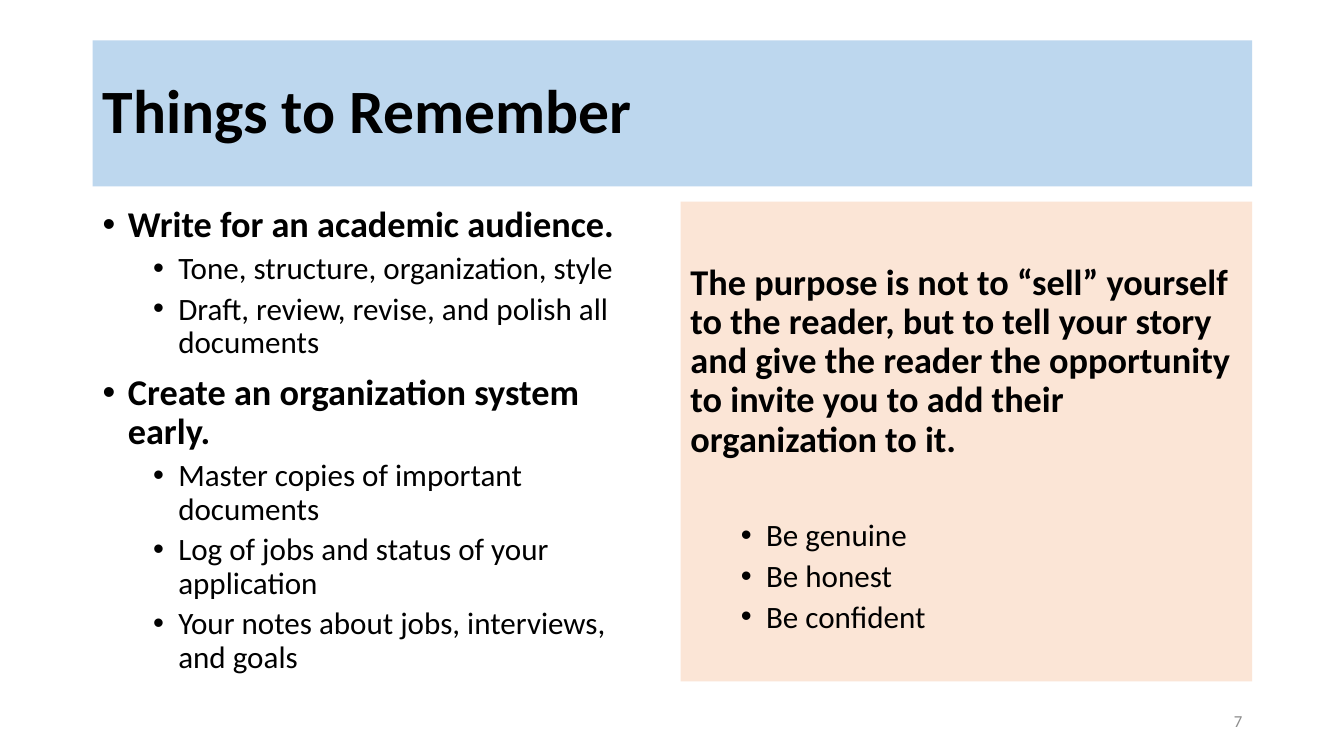
from pptx import Presentation
from pptx import util as u
from pptx.dml.color import RGBColor
from pptx.enum import shapes, text
from pptx.oxml.ns import qn
from lxml import etree

BLUE = RGBColor(0xBD, 0xD7, 0xEE)
PEACH = RGBColor(0xFB, 0xE5, 0xD6)
BLACK = RGBColor(0, 0, 0)
GRAY = RGBColor(0x8C, 0x8C, 0x8C)
FONT = "Calibri"
LEFT, WIDE, GAP = 0.92, 11.5, 0.16
HALF = (WIDE - GAP) / 2

TIPS = [
    (0, "Write for an academic audience."),
    (1, "Tone, structure, organization, style"),
    (1, "Draft, review, revise, and polish all documents"),
    (0, "Create an organization system early."),
    (1, "Master copies of important documents"),
    (1, "Log of jobs and status of your application"),
    (1, "Your notes about jobs, interviews, and goals"),
]
PURPOSE = (
    "The purpose is not to “sell” yourself to the reader, but to tell your "
    "story and give the reader the opportunity to invite you to add their "
    "organization to it."
)
TRAITS = ["Be genuine", "Be honest", "Be confident"]


def add_box(slide, box, fill=None):
    place = [u.Inches(n) for n in box]
    if fill is None:
        shape = slide.shapes.add_textbox(*place)
    else:
        shape = slide.shapes.add_shape(shapes.MSO_SHAPE.RECTANGLE, *place)
        shape.shadow.inherit = False
        shape.fill.solid()
        shape.fill.fore_color.rgb = fill
        shape.line.fill.background()
    frame = shape.text_frame
    frame.word_wrap = True
    frame.vertical_anchor = text.MSO_ANCHOR.TOP
    return frame


def style(para, size, bold=False, color=BLACK, align=text.PP_ALIGN.LEFT):
    para.alignment = align
    for run in para.runs:
        font = run.font
        font.name, font.size, font.bold = FONT, u.Pt(size), bold
        font.color.rgb = color


def set_bullet(para, level):
    props = para._p.get_or_add_pPr()
    props.set("marL", str(u.Inches(0.25 + 0.5 * level)))
    props.set("indent", str(u.Inches(-0.25)))
    etree.SubElement(props, qn("a:buFont"), typeface="Arial")
    etree.SubElement(props, qn("a:buChar"), char="•")


def fill_list(frame, items, plain=()):
    frame.text = "\n".join(words for _, words in items)
    for para, (level, words) in zip(frame.paragraphs, items):
        para.level = level
        para.line_spacing = 0.9
        para.space_before = u.Pt(5 if level else 10)
        style(para, 22.2 if level else 25.9, bold=level == 0)
        if words not in plain:
            set_bullet(para, level)


def add_title(slide, box):
    frame = add_box(slide, box, BLUE)
    frame.vertical_anchor = text.MSO_ANCHOR.MIDDLE
    frame.text = "Things to Remember"
    para = frame.paragraphs[0]
    para.line_spacing = 0.9
    style(para, 44, bold=True)


def add_tips(slide, box):
    fill_list(add_box(slide, box), TIPS)


def add_purpose(slide, box):
    frame = add_box(slide, box, PEACH)
    frame.margin_top = u.Inches(0.62)
    items = [(0, PURPOSE)] + [(1, trait) for trait in TRAITS]
    fill_list(frame, items, plain=(PURPOSE,))
    frame.paragraphs[1].space_before = u.Pt(43)


def add_number(slide, box):
    frame = add_box(slide, box)
    frame.vertical_anchor = text.MSO_ANCHOR.MIDDLE
    frame.text = "7"
    style(frame.paragraphs[0], 12, color=GRAY, align=text.PP_ALIGN.RIGHT)


def main():
    deck = Presentation()
    deck.slide_width, deck.slide_height = u.Inches(13.33), u.Inches(7.5)
    slide = deck.slides.add_slide(deck.slide_layouts[6])
    add_title(slide, (LEFT, 0.4, WIDE, 1.45))
    add_tips(slide, (LEFT, 2, HALF, 4.76))
    add_purpose(slide, (LEFT + HALF + GAP, 2, HALF, 4.76))
    add_number(slide, (LEFT + WIDE - 3, 6.95, 3, 0.4))
    deck.save("out.pptx")


if __name__ == "__main__":
    main()
